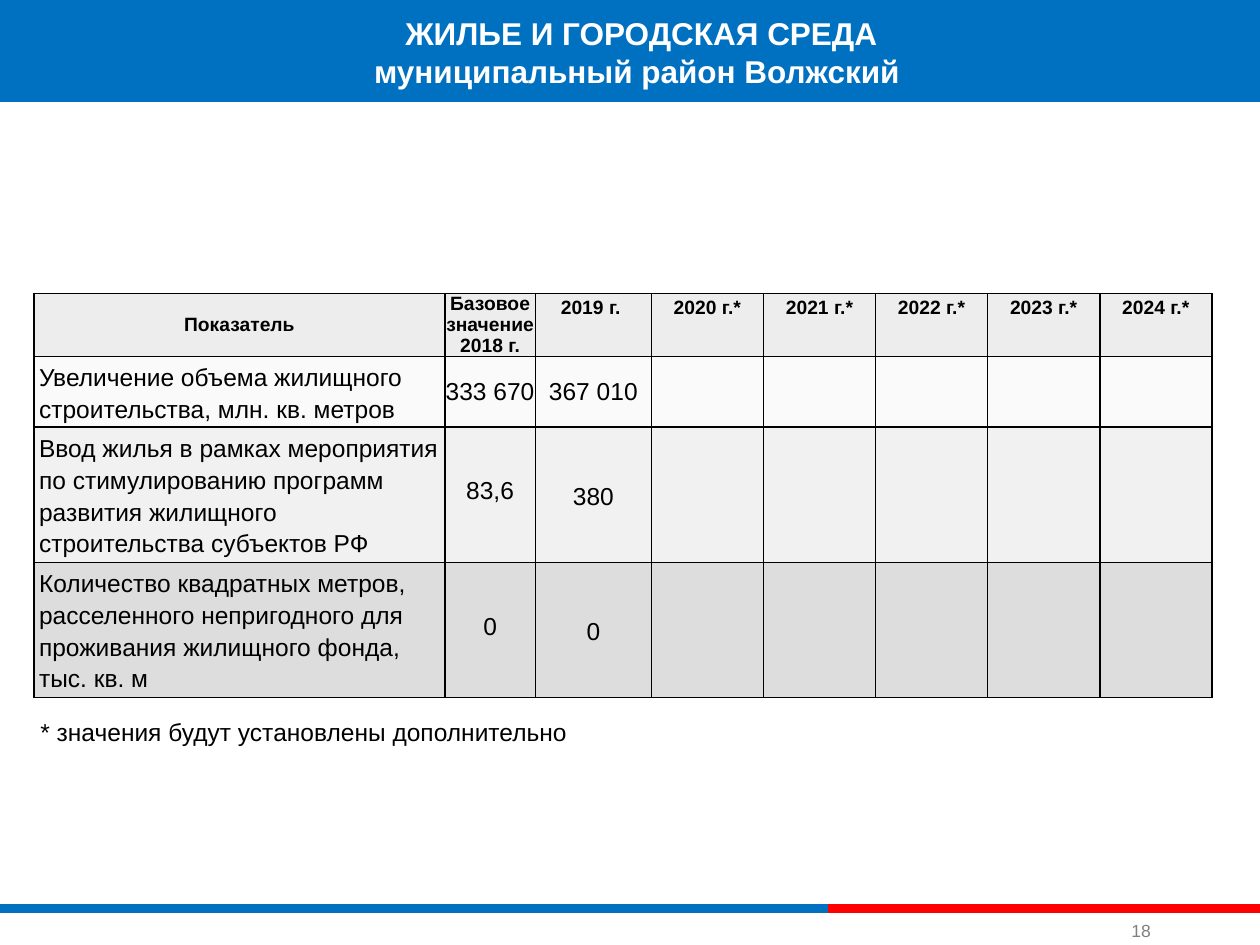
"""Builds a slide with a table of housing and urban environment indicators."""
from lxml import etree
from pptx import Presentation
from pptx import util as u
from pptx.dml.color import RGBColor
from pptx.enum import shapes, text
from pptx.oxml import parse_xml
from pptx.oxml.ns import nsdecls, qn

Inches, Pt = u.Inches, u.Pt
CENTER, LEFT = text.PP_ALIGN.CENTER, text.PP_ALIGN.LEFT
TOP, MIDDLE, BOTTOM = text.MSO_ANCHOR.TOP, text.MSO_ANCHOR.MIDDLE, text.MSO_ANCHOR.BOTTOM


def rgb(value):
    return RGBColor.from_string(value)


def write(tf, lines, size, color, bold=False, align=LEFT, spacing=None):
    for i, line in enumerate(lines):
        p = tf.add_paragraph() if i else tf.paragraphs[0]
        p.alignment = align
        if spacing:
            p.line_spacing = spacing
        r = p.add_run()
        r.text = line
        r.font.name = "Arial"
        r.font.size = Pt(size)
        r.font.bold = bold
        r.font.color.rgb = rgb(color)


prs = Presentation()
prs.slide_width, prs.slide_height = Inches(10), Inches(7.5)
s = prs.slides.add_slide(prs.slide_layouts[5])

for x1, x2, color in [(0, 6.57, "0070C1"), (6.57, 10, "FF0000")]:
    line = s.shapes.add_connector(
        shapes.MSO_CONNECTOR.STRAIGHT, Inches(x1), Inches(7.21), Inches(x2), Inches(7.21))
    line.line.color.rgb = rgb(color)
    line.line.width = Pt(5)
    etree.SubElement(line._element.spPr, qn("a:effectLst"))

band = s.shapes.add_shape(
    shapes.MSO_SHAPE.RECTANGLE, 0, Inches(-0.03), Inches(10), Inches(0.84))
band.shadow.inherit = False
band.fill.solid()
band.fill.fore_color.rgb = rgb("0070C1")
band.line.fill.background()

title = s.shapes.title
s.shapes._spTree.append(title._element)
labels = [
    (title, (2.89, 0.06, 4.4, 0.71), TOP, CENTER, 18, "FFFFFF", True,
     ["ЖИЛЬЕ И ГОРОДСКАЯ СРЕДА", "муниципальный район Волжский "]),
    (None, (8.93, 7.27, 0.3, 0.25), BOTTOM, LEFT, 10, "808080", False, ["18"]),
    (None, (0.27, 5.64, 4.34, 0.34), TOP, LEFT, 14, "000000", False,
     ["* значения будут установлены дополнительно"]),
]
for sp, box, anchor, align, size, color, bold, lines in labels:
    box = [Inches(v) for v in box]
    sp = sp or s.shapes.add_textbox(*box)
    sp.left, sp.top, sp.width, sp.height = box
    tf = sp.text_frame
    tf.word_wrap = False
    tf.auto_size = text.MSO_AUTO_SIZE.SHAPE_TO_FIT_TEXT
    tf.vertical_anchor = anchor
    tf.margin_left = tf.margin_right = tf.margin_top = tf.margin_bottom = Inches(0.05)
    write(tf, lines, size, color, bold, align)

years = ["2019 г. "] + [f"{year} г.*" for year in range(2020, 2025)]
rows = [
    (0.5, "EDEDED", 100, ["Показатель", "Базовое значение 2018 г."] + years),
    (0.56, "F2F2F2", 36,
     ["Увеличение объема жилищного строительства, млн. кв. метров", "333 670", "367 010"]),
    (1.07, "D9D9D9", 35,
     ["Ввод жилья в рамках мероприятия по стимулированию программ развития "
      "жилищного строительства субъектов РФ", "83,6", "380"]),
    (1.07, "BFBFBF", 52,
     ["Количество квадратных метров, расселенного непригодного для проживания "
      "жилищного фонда, тыс. кв. м", "0", "0"]),
]
widths = [3.26, 0.72, 0.92] + [0.89] * 5
table = s.shapes.add_table(
    len(rows), len(widths), Inches(0.27), Inches(2.33), Inches(9.35), Inches(3.2)).table
table.first_row = table.horz_banding = False
for column, width in zip(table.columns, widths):
    column.width = Inches(width)

for i, (height, color, alpha, values) in enumerate(rows):
    table.rows[i].height = Inches(height)
    for j in range(len(widths)):
        cell = table.cell(i, j)
        cell.fill.solid()
        cell.fill.fore_color.rgb = rgb(color)
        tcPr = cell._tc.get_or_add_tcPr()
        if alpha < 100:
            srgb = tcPr.find(".//" + qn("a:srgbClr"))
            etree.SubElement(srgb, qn("a:alpha")).set("val", str(alpha * 1000))
        for k, side in enumerate(("lnL", "lnR", "lnT", "lnB")):
            tcPr.insert(k, parse_xml(
                f'<a:{side} {nsdecls("a")} w="12700"><a:solidFill>'
                f'<a:srgbClr val="000000"/></a:solidFill></a:{side}>'))
        if j >= len(values):
            continue
        header = i == 0
        cell.margin_top = cell.margin_bottom = 0
        cell.margin_left = Inches(0.01 if header or j else 0.04)
        cell.margin_right = Inches(0.01)
        if i == 1 and j:
            cell.margin_left = cell.margin_right = 0
        cell.vertical_anchor = MIDDLE
        if header and j:
            cell.vertical_anchor = BOTTOM if j == 1 else TOP
        spacing = 1.15
        if j == 1 or header and j == 0:
            spacing = Pt(12)
        if i == 1 and j:
            spacing = None
        write(cell.text_frame, [values[j]], 11 if header else 14, "000000", header,
              CENTER if header or j else LEFT, spacing)

prs.save("out.pptx")
